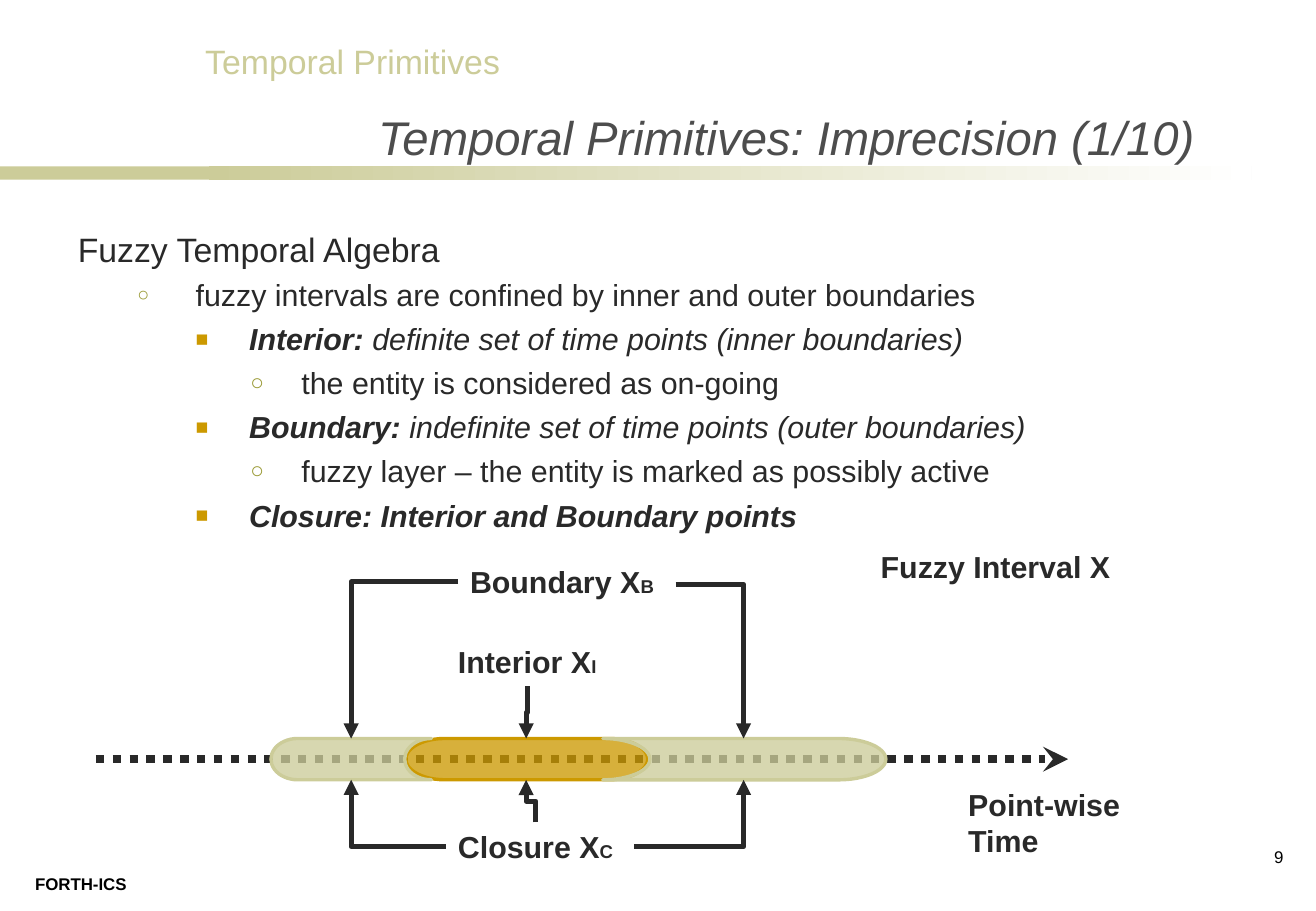
from lxml.etree import SubElement
from pptx import Presentation
from pptx.dml.color import RGBColor
from pptx.enum.dml import MSO_LINE
from pptx.enum.shapes import MSO_CONNECTOR, MSO_SHAPE
from pptx.enum.text import MSO_ANCHOR, MSO_AUTO_SIZE, PP_ALIGN
from pptx.oxml.ns import qn
from pptx.util import Inches, Pt

FONT = "Arial"
INK = "292929"
SAGE = "CCCC99"
GOLD = "CC9900"
OLIVE = "999933"
AXIS_Y = 6.25
BAND_TOP, BAND_BOTTOM = 6.08, 6.42
LEFT_EDGE, RIGHT_EDGE = 2.89, 6.12

LEVELS = [
    (0.49, 0.49, None, None, None),
    (0.97, 0.48, "○", OLIVE, 65),
    (1.41, 0.44, "■", GOLD, 70),
    (1.84, 0.42, "○", OLIVE, 75),
]
OUTLINE = [
    (0, "", "Fuzzy Temporal Algebra"),
    (1, "", "fuzzy intervals are confined by inner and outer boundaries"),
    (2, "Interior: ", "definite set of time points (inner boundaries)"),
    (3, "", "the entity is considered as on-going"),
    (2, "Boundary: ", "indefinite set of time points (outer boundaries)"),
    (3, "", "fuzzy layer – the entity is marked as possibly active"),
    (2, "Closure: Interior and Boundary points", ""),
]


def colour(value):
    return RGBColor.from_string(value)


def set_font(font, size, value, bold=False, italic=False):
    font.name = FONT
    font.size = Pt(size)
    font.bold = bold
    font.italic = italic
    font.color.rgb = colour(value)


def place(shape, left, top, width, height):
    shape.left, shape.top = Inches(left), Inches(top)
    shape.width, shape.height = Inches(width), Inches(height)


def add_label(page, left, top, width, height, text, size=18, value=INK,
              bold=True, subscript="", wrap=False, align=PP_ALIGN.LEFT):
    box = page.shapes.add_textbox(Inches(left), Inches(top), Inches(width), Inches(height))
    box.text_frame.word_wrap = wrap
    para = box.text_frame.paragraphs[0]
    para.alignment = align
    set_font(para.font, size, value, bold)
    para.add_run().text = text
    if subscript:
        span = para.add_run()
        span.text = subscript
        span.font.size = Pt(11)


def add_bar(page, left, width):
    bar = page.shapes.add_shape(MSO_SHAPE.RECTANGLE, Inches(left), Inches(1.37),
                                Inches(width), Inches(0.11))
    bar.shadow.inherit = False
    bar.line.fill.background()
    return bar


def add_header(page):
    solid = add_bar(page, 0, 2.53)
    solid.fill.solid()
    solid.fill.fore_color.rgb = colour(SAGE)
    fade = add_bar(page, 1.72, 8.58)
    fade.fill.gradient()
    fade.fill.gradient_angle = 0
    for stop, value in zip(fade.fill.gradient_stops, (SAGE, "FFFFFF")):
        stop.color.rgb = colour(value)


def fill_title(title):
    place(title, 2.11, 0.78, 7.82, 0.63)
    frame = title.text_frame
    frame.auto_size = MSO_AUTO_SIZE.NONE
    frame.vertical_anchor = MSO_ANCHOR.BOTTOM
    para = frame.paragraphs[0]
    para.text = "Temporal Primitives: Imprecision (1/10)"
    para.alignment = PP_ALIGN.RIGHT
    set_font(para.font, 28, "4D4D4D", italic=True)


def set_bullet(para, level):
    indent, hanging, mark, value, percent = LEVELS[level]
    properties = para._p.get_or_add_pPr()
    properties.set("marL", str(Inches(indent)))
    properties.set("indent", str(-Inches(hanging)))
    if mark is None:
        SubElement(properties, qn("a:buNone"))
        return
    tint = SubElement(properties, qn("a:buClr"))
    SubElement(tint, qn("a:srgbClr"), val=value)
    SubElement(properties, qn("a:buSzPct"), val=str(percent * 1000))
    SubElement(properties, qn("a:buFont"), typeface=FONT)
    SubElement(properties, qn("a:buChar"), char=mark)


def fill_body(body):
    place(body, 0.54, 1.83, 9.75, 4.83)
    frame = body.text_frame
    frame.auto_size = MSO_AUTO_SIZE.NONE
    for index, (level, term, text) in enumerate(OUTLINE):
        para = frame.add_paragraph() if index else frame.paragraphs[0]
        para.level = level
        para.space_before = Pt(4.5 if index else 0)
        set_bullet(para, level)
        set_font(para.font, 18 if level else 20, INK, italic=bool(term))
        for words, bold in ((term, True), (text, False)):
            if words:
                span = para.add_run()
                span.text = words
                span.font.bold = bold


def add_band(page, kind, left, width, value, rotation=0):
    band = page.shapes.add_shape(kind, Inches(left), Inches(BAND_TOP),
                                 Inches(width), Inches(BAND_BOTTOM - BAND_TOP))
    band.rotation = rotation
    band.shadow.inherit = False
    band.fill.solid()
    band.fill.fore_color.rgb = colour(value)
    tint = band._element.spPr.find(qn("a:solidFill"))[0]
    SubElement(tint, qn("a:alpha"), val="77000")
    band.line.color.rgb = colour(value)
    band.line.width = Pt(2)


def add_arrow(page, kind, start, end, width=3, head="triangle", dash=None):
    arrow = page.shapes.add_connector(kind, *(Inches(n) for n in (*start, *end)))
    arrow.line.color.rgb = colour(INK)
    arrow.line.width = Pt(width)
    if dash:
        arrow.line.dash_style = dash
    SubElement(arrow.line._get_or_add_ln(), qn("a:tailEnd"), type=head)
    SubElement(arrow._element.spPr, qn("a:effectLst"))
    return arrow


def add_corner_arrow(page, start, end):
    arrow = add_arrow(page, MSO_CONNECTOR.ELBOW, start, end)
    arrow._element.spPr.find(qn("a:prstGeom")).set("prst", "bentConnector2")


def add_step_arrow(page, start, end):
    middle_x, middle_y = (start[0] + end[0]) / 2, (start[1] + end[1]) / 2
    half_x, half_y = (end[0] - start[0]) / 2, (end[1] - start[1]) / 2
    arrow = add_arrow(page, MSO_CONNECTOR.ELBOW,
                      (middle_x - half_y, middle_y + half_x),
                      (middle_x + half_y, middle_y - half_x))
    arrow._element.spPr.find(qn("a:xfrm")).set("rot", str(90 * 60000))


def add_diagram(page):
    add_arrow(page, MSO_CONNECTOR.STRAIGHT, (0.79, AXIS_Y), (8.79, AXIS_Y),
              5, "stealth", MSO_LINE.ROUND_DOT)
    add_label(page, 7.87, 6.42, 1.84, 0.7, "Point-wise Time", wrap=True)
    add_band(page, MSO_SHAPE.FLOWCHART_TERMINATOR, 3.34, 1.99, GOLD)
    add_band(page, MSO_SHAPE.FLOWCHART_STORED_DATA, 2.23, 1.32, SAGE)
    add_band(page, MSO_SHAPE.FLOWCHART_STORED_DATA, 4.96, 2.33, SAGE, 180)
    add_label(page, 3.77, 4.59, 1.73, 0.4, "Boundary X", subscript="B")
    add_label(page, 3.67, 5.25, 1.35, 0.4, "Interior X", subscript="I")
    add_label(page, 3.67, 6.77, 1.49, 0.4, "Closure X", subscript="C")
    add_label(page, 7.15, 4.46, 2.26, 0.4, "Fuzzy Interval X", wrap=True)
    add_corner_arrow(page, (5.56, 4.81), (RIGHT_EDGE, BAND_TOP))
    add_corner_arrow(page, (3.77, 4.79), (LEFT_EDGE, BAND_TOP))
    add_corner_arrow(page, (5.22, 6.97), (RIGHT_EDGE, BAND_BOTTOM))
    add_corner_arrow(page, (3.67, 6.97), (LEFT_EDGE, BAND_BOTTOM))
    add_step_arrow(page, (4.34, 5.65), (4.33, BAND_TOP))
    add_step_arrow(page, (4.41, 6.77), (4.33, BAND_BOTTOM))


def main():
    deck = Presentation()
    deck.slide_width, deck.slide_height = Inches(10.83), Inches(7.5)
    page = deck.slides.add_slide(deck.slide_layouts[1])
    add_header(page)
    add_label(page, 1.59, 0.29, 2.65, 0.44, "Temporal Primitives", 20, SAGE, False)
    add_label(page, 0.19, 7.14, 0.97, 0.27, "FORTH-ICS", 10, "000000")
    fill_title(page.shapes.title)
    fill_body(page.placeholders[1])
    add_label(page, 10.17, 6.92, 0.49, 0.42, "9", 10, "000000", False,
              wrap=True, align=PP_ALIGN.RIGHT)
    add_diagram(page)
    deck.save("out.pptx")


if __name__ == "__main__":
    main()
